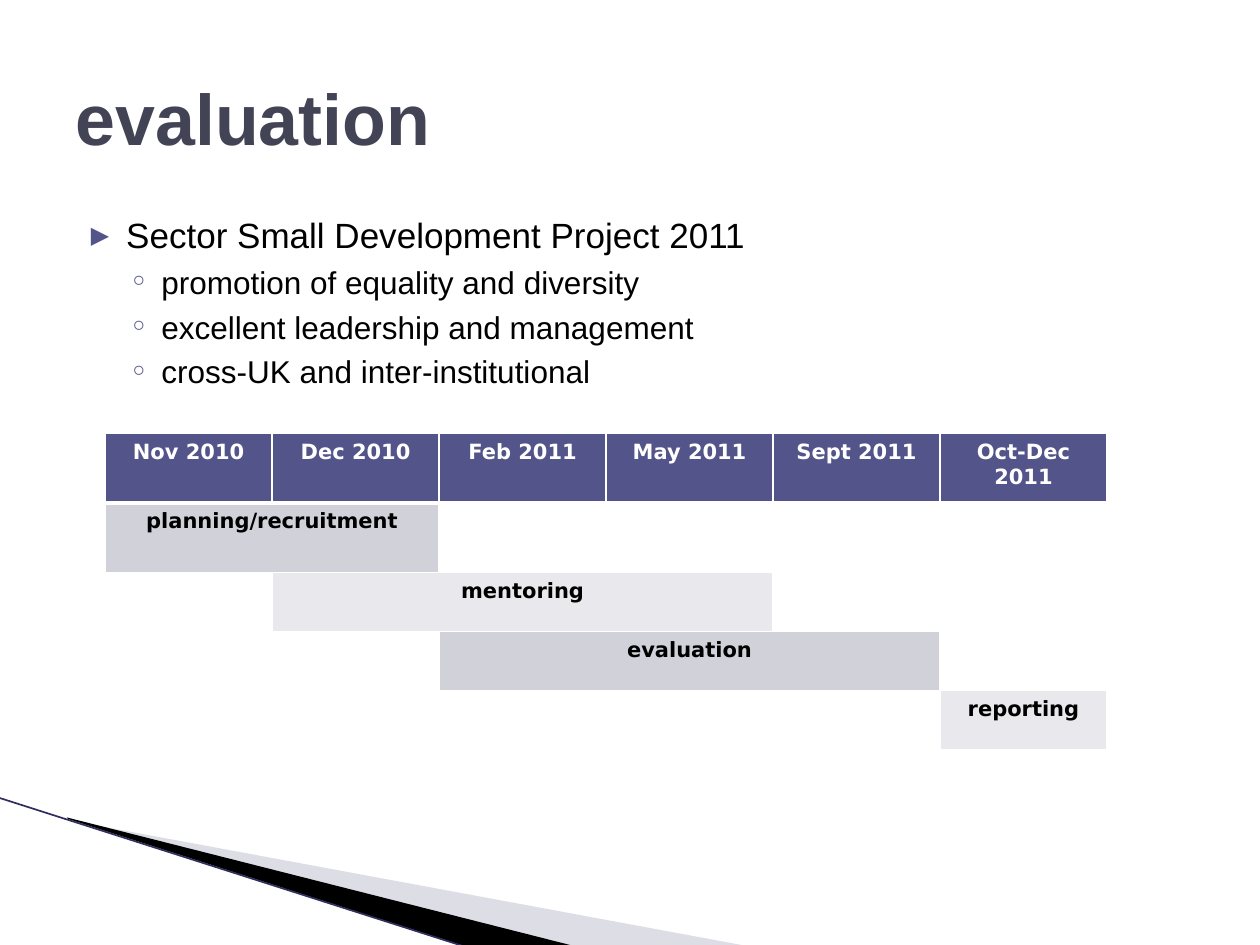
import dataclasses
import lxml.etree
import pptx
import pptx.dml.color
import pptx.enum.shapes
import pptx.enum.text
import pptx.oxml.ns
import pptx.util

Cm = pptx.util.Cm
Pt = pptx.util.Pt
qn = pptx.oxml.ns.qn


@dataclasses.dataclass(frozen=True)
class Theme:
    font: str = "Arial"
    table_font: str = "DejaVu Sans"
    title: str = "424456"
    ink: str = "000000"
    paper: str = "FFFFFF"
    accent: str = "53548A"
    bands: tuple = ("D1D1DA", "E9E9ED")
    wedge: str = "AAAABF"
    edge: str = "2F2E5C"
    title_size: float = 41
    item_sizes: tuple = (20, 18)
    table_size: float = 12


@dataclasses.dataclass(frozen=True)
class Box:
    left: float
    top: float
    width: float
    height: float

    def place(self, shape):
        shape.left, shape.top = Cm(self.left), Cm(self.top)
        shape.width, shape.height = Cm(self.width), Cm(self.height)

    def point(self, x, y):
        return Cm(self.left + x), Cm(self.top + y)


THEME = Theme()
ITEMS = [
    (0, "Sector Small Development Project 2011"),
    (1, "promotion of equality and diversity"),
    (1, "excellent leadership and management"),
    (1, "cross-UK and inter-institutional"),
]
BULLETS = [("▶", 68, 1.02, -0.71), ("◦", 100, 1.73, -0.64)]
MONTHS = ["Nov 2010", "Dec 2010", "Feb 2011", "May 2011", "Sept 2011", "Oct-Dec 2011"]
PHASES = [
    ("planning/recruitment", 0, 1),
    ("mentoring", 1, 3),
    ("evaluation", 2, 4),
    ("reporting", 5, 5),
]
ROW_HEIGHTS = [1.4, 1.4, 1.19, 1.19, 1.19]


def rgb(colour):
    return pptx.dml.color.RGBColor.from_string(colour)


def add_span(para, text, font, size, colour, bold=False):
    span = para.add_run()
    span.text = text
    span.font.name = font
    span.font.size = Pt(size)
    span.font.bold = bold
    span.font.color.rgb = rgb(colour)


def add_child(parent, tag, **attributes):
    return lxml.etree.SubElement(parent, qn(tag), attributes)


def set_bullet(para, level):
    mark, percent, margin, indent = BULLETS[level]
    props = para._p.get_or_add_pPr()
    props.set("marL", str(Cm(margin)))
    props.set("indent", str(Cm(indent)))
    add_child(add_child(props, "a:buClr"), "a:srgbClr", val=THEME.accent)
    add_child(props, "a:buSzPct", val=str(percent * 1000))
    add_child(props, "a:buFont", typeface=THEME.table_font)
    add_child(props, "a:buChar", char=mark)


def fill_title(page, box):
    title = page.shapes.title
    box.place(title)
    title.text_frame.vertical_anchor = pptx.enum.text.MSO_ANCHOR.MIDDLE
    para = title.text_frame.paragraphs[0]
    para.alignment = pptx.enum.text.PP_ALIGN.LEFT
    add_span(para, "evaluation", THEME.font, THEME.title_size, THEME.title, True)


def fill_list(page, box):
    body = page.placeholders[1]
    box.place(body)
    frame = body.text_frame
    frame.margin_top = Cm(0.2)
    for number, (level, text) in enumerate(ITEMS):
        para = frame.add_paragraph() if number else frame.paragraphs[0]
        para.level = level
        para.space_before = Pt(4 if number else 0)
        set_bullet(para, level)
        add_span(para, text, THEME.font, THEME.item_sizes[level], THEME.ink)


def set_borders(cell, bottom):
    props = cell._tc.get_or_add_tcPr()
    for side, width in (("L", 1), ("R", 1), ("T", 1), ("B", bottom)):
        line = add_child(props, f"a:ln{side}", w=str(Pt(width)))
        add_child(add_child(line, "a:solidFill"), "a:srgbClr", val=THEME.paper)


def fill_cell(cell, text, fill, colour):
    cell.fill.solid()
    cell.fill.fore_color.rgb = rgb(fill)
    para = cell.text_frame.paragraphs[0]
    para.alignment = pptx.enum.text.PP_ALIGN.CENTER
    add_span(para, text, THEME.table_font, THEME.table_size, colour, True)


def add_timeline(page, box):
    frame = page.shapes.add_table(
        len(ROW_HEIGHTS), len(MONTHS), *box.point(0, 0), Cm(box.width), Cm(box.height))
    table = frame.table
    table.horz_banding = False
    for column in table.columns:
        column.width = Cm(box.width / len(MONTHS))
    for row, height in zip(table.rows, ROW_HEIGHTS):
        row.height = Cm(height)
    for number, row in enumerate(table.rows):
        for cell in row.cells:
            set_borders(cell, 1 if number else 3)
            cell.fill.background()
    for column, month in enumerate(MONTHS):
        fill_cell(table.cell(0, column), month, THEME.accent, THEME.paper)
    for number, (phase, first, last) in enumerate(PHASES):
        cell = table.cell(number + 1, first)
        if last > first:
            cell.merge(table.cell(number + 1, last))
        fill_cell(cell, phase, THEME.bands[number % 2], THEME.ink)


def add_wedge(page, box, corners, colour):
    points = [box.point(*corner) for corner in corners]
    builder = page.shapes.build_freeform(*points[0], scale=1)
    builder.add_line_segments(points[1:], close=True)
    wedge = builder.convert_to_shape()
    wedge.shadow.inherit = False
    wedge.fill.solid()
    wedge.fill.fore_color.rgb = rgb(colour)
    wedge.line.fill.background()
    return wedge


def add_corner(page, box):
    pale = add_wedge(
        page, box, [(1.4, 0.46), (15.11, 3), (11.58, 3), (1.4, 0.43)], THEME.wedge)
    tint = pale._element.spPr.find(qn("a:solidFill"))[0]
    add_child(tint, "a:alpha", val="40000")
    add_wedge(page, box, [(1.35, 0.4), (11.61, 3), (9.45, 3.02), (1.37, 0.43)], THEME.ink)
    edge = page.shapes.add_connector(
        pptx.enum.shapes.MSO_CONNECTOR.STRAIGHT, *box.point(-0.03, 0), *box.point(9.42, 3.02))
    edge.line.color.rgb = rgb(THEME.edge)
    edge.line.width = Pt(0.95)
    add_child(edge._element.spPr, "a:effectLst")


def main():
    deck = pptx.Presentation()
    deck.slide_width, deck.slide_height = Cm(25.4), Cm(19.05)
    page = deck.slides.add_slide(deck.slide_layouts[1])
    page.background.fill.solid()
    page.background.fill.fore_color.rgb = rgb(THEME.paper)
    add_corner(page, Box(0, 16.08, 15.11, 3.02))
    fill_list(page, Box(1.27, 4.11, 22.86, 12.57))
    fill_title(page, Box(1.27, 0.76, 22.86, 3.18))
    add_timeline(page, Box(2.12, 8.74, 20.2, sum(ROW_HEIGHTS)))
    deck.save("out.pptx")


if __name__ == "__main__":
    main()
